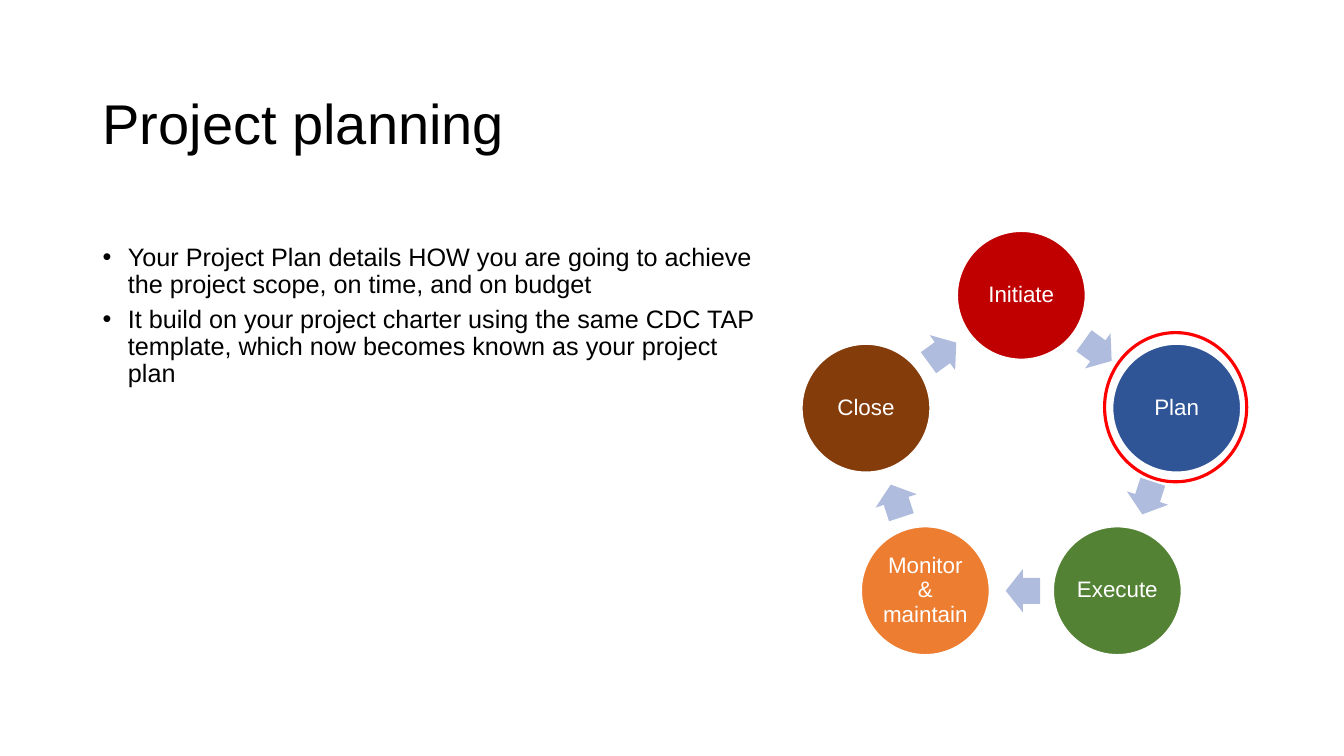
from math import cos, radians, sin

from lxml import etree
from pptx import Presentation
from pptx.dml.color import RGBColor
from pptx.enum.shapes import MSO_SHAPE as SHAPE
from pptx.enum.text import MSO_ANCHOR as ANCHOR, PP_ALIGN as ALIGN
from pptx.oxml.ns import qn
from pptx.util import Inches, Pt

PHASES = [
    ("Initiate", "C00000"),
    ("Plan", "2F5597"),
    ("Execute", "548235"),
    ("Monitor & maintain", "ED7D31"),
    ("Close", "843C0B"),
]
POINTS = [
    "Your Project Plan details HOW you are going to achieve the project scope, "
    "on time, and on budget",
    "It build on your project charter using the same CDC TAP template, "
    "which now becomes known as your project plan",
]


def color(value):
    return RGBColor.from_string(value)


def write(tf, paragraphs, size, fill="000000", align=ALIGN.LEFT,
          anchor=ANCHOR.TOP, before=0, bullet=None, inset=None):
    """Fill a text frame with paragraphs of one format."""
    tf.word_wrap = True
    tf.vertical_anchor = anchor
    if inset is not None:
        tf.margin_left = tf.margin_right = Inches(inset)
        tf.margin_top = tf.margin_bottom = Inches(inset)
    for i, text in enumerate(paragraphs):
        p = tf.add_paragraph() if i else tf.paragraphs[0]
        if bullet:
            pPr = p._p.get_or_add_pPr()
            pPr.set("marL", str(Inches(0.25)))
            pPr.set("indent", str(Inches(-0.25)))
            etree.SubElement(pPr, qn("a:buFont")).set("typeface", "Arial")
            etree.SubElement(pPr, qn("a:buChar")).set("char", bullet)
        p.alignment = align
        p.line_spacing = 0.9
        if i and before:
            p.space_before = Pt(before)
        r = p.add_run()
        r.text = text
        r.font.name = "Arial"
        r.font.size = Pt(size)
        r.font.color.rgb = color(fill)


class SlideBuilder:
    arrow_fill = "B0BCDE"
    circle_size = 1.27
    arrow_size = (0.34, 0.43)

    def __init__(self, prs):
        self.slide = prs.slides.add_slide(prs.slide_layouts[6])

    def text(self, x, y, w, h, paragraphs, **style):
        box = self.slide.shapes.add_textbox(*map(Inches, (x, y, w, h)))
        write(box.text_frame, paragraphs, **style)

    def shape(self, kind, cx, cy, w, h, fill=None, line=None, width=1):
        """Add a preset shape around its centre."""
        sp = self.slide.shapes.add_shape(
            kind, Inches(cx - w / 2), Inches(cy - h / 2), Inches(w), Inches(h))
        sp.shadow.inherit = False
        if fill:
            sp.fill.solid()
            sp.fill.fore_color.rgb = color(fill)
        else:
            sp.fill.background()
        if line:
            sp.line.color.rgb = color(line)
            sp.line.width = Pt(width)
        else:
            sp.line.fill.background()
        return sp

    def circle(self, cx, cy, label, fill):
        size = self.circle_size
        sp = self.shape(SHAPE.OVAL, cx, cy, size, size, fill, "FFFFFF")
        write(sp.text_frame, [label], size=16, fill="FFFFFF",
              align=ALIGN.CENTER, anchor=ANCHOR.MIDDLE, inset=0.02)

    def arrow(self, cx, cy, angle):
        sp = self.shape(SHAPE.RIGHT_ARROW, cx, cy, *self.arrow_size, self.arrow_fill)
        sp.adjustments[0] = 0.6
        sp.adjustments[1] = 0.5
        sp.rotation = angle

    def cycle(self, cx, cy, radius, phases):
        """Set phases clockwise from the top, with an arrow after each."""
        step = 360 / len(phases)
        midway = radius * cos(radians(step / 2))
        setback = 0.015
        for i, (label, fill) in enumerate(phases):
            a = radians(i * step)
            self.circle(cx + radius * sin(a), cy - radius * cos(a), label, fill)
            turn = (i + 0.5) * step
            t = radians(turn)
            self.arrow(cx + midway * sin(t) - setback * cos(t),
                       cy - midway * cos(t) - setback * sin(t), turn)


def main():
    prs = Presentation()
    prs.slide_width, prs.slide_height = Inches(13.33), Inches(7.5)
    s = SlideBuilder(prs)

    # Title and bullets
    s.text(0.92, 0.4, 11.03, 1.71, ["Project planning"], size=40, anchor=ANCHOR.MIDDLE)
    s.text(0.92, 2.38, 6.79, 4.01, POINTS, size=18, before=5, bullet="•")

    # Ring marking the current phase, then the project cycle
    s.shape(SHAPE.OVAL, 11.66, 4.04, 1.41, 1.48, line="FF0000", width=2.25)
    s.cycle(10.13, 4.55, 1.62, PHASES)

    prs.save("out.pptx")


if __name__ == "__main__":
    main()
